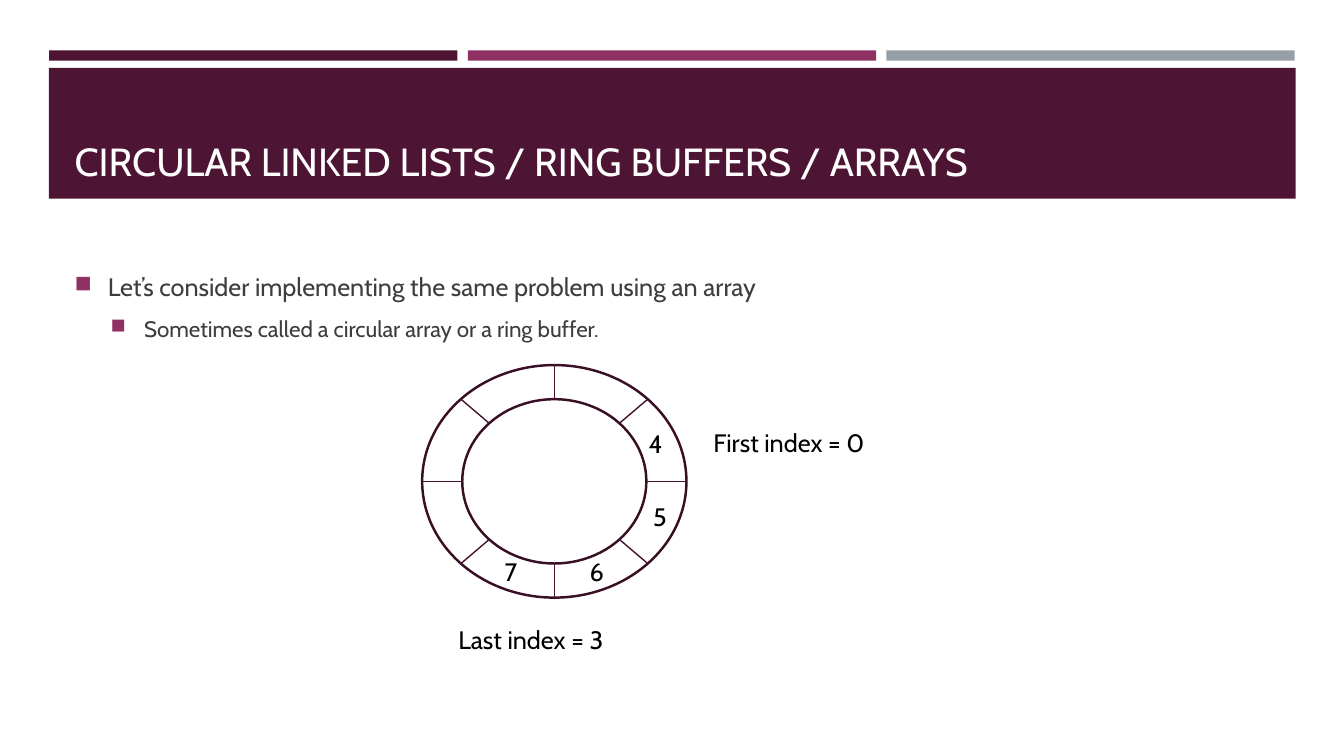
from dataclasses import dataclass
from math import cos, pi, sin

from lxml import etree
from pptx import Presentation
from pptx.dml.color import RGBColor
from pptx.enum.shapes import MSO_CONNECTOR as Connector
from pptx.enum.shapes import MSO_SHAPE as Shape
from pptx.enum.text import MSO_ANCHOR as Anchor
from pptx.oxml.ns import qn
from pptx.util import Cm, Pt


@dataclass(frozen=True)
class Theme:
    font: str = "Cabin"
    plum: str = "4D1434"
    magenta: str = "903163"
    grey: str = "969FA7"
    white: str = "FFFFFF"
    black: str = "000000"
    body: str = "3D3D3D"
    ring: str = "390F26"
    spoke: str = "45122F"
    title_size: int = 28
    text_size: int = 18
    sub_size: int = 16


THEME = Theme()
SLOTS = 8
CENTRE = (13.97, 12.13)
OUTER = (3.33, 2.93)
INNER = (2.32, 2.07)


def color(value):
    return RGBColor.from_string(value)


def add_block(slide, kind, left, top, width, height, fill, line=None):
    shape = slide.shapes.add_shape(kind, Cm(left), Cm(top), Cm(width), Cm(height))
    shape.shadow.inherit = False
    shape.fill.solid()
    shape.fill.fore_color.rgb = color(fill)
    if line:
        shape.line.color.rgb = color(line)
        shape.line.width = Pt(1.75)
    else:
        shape.line.fill.background()


def add_frame(slide, left, top, width, height, wrap=True, anchor=Anchor.TOP):
    box = slide.shapes.add_textbox(Cm(left), Cm(top), Cm(width), Cm(height))
    frame = box.text_frame
    frame.word_wrap = wrap
    frame.vertical_anchor = anchor
    return frame


def set_text(paragraph, text, size, text_color):
    paragraph.text = text
    paragraph.font.name = THEME.font
    paragraph.font.size = Pt(size)
    paragraph.font.color.rgb = color(text_color)


def add_label(slide, text, left, top, width):
    frame = add_frame(slide, left, top, width, 1.02, wrap=False)
    set_text(frame.paragraphs[0], text, THEME.text_size, THEME.black)


def set_bullet(paragraph, margin, level):
    properties = paragraph._p.get_or_add_pPr()
    properties.set("marL", str(Cm(margin)))
    properties.set("indent", str(Cm(-0.84)))
    paragraph.level = level
    bullet_color = etree.SubElement(properties, qn("a:buClr"))
    etree.SubElement(bullet_color, qn("a:srgbClr"), val=THEME.magenta)
    etree.SubElement(properties, qn("a:buSzPct"), val="92000")
    etree.SubElement(properties, qn("a:buChar"), char="■")


def add_bullets(slide):
    frame = add_frame(slide, 1.63, 6.72, 30.63, 2.2)
    first, second = frame.paragraphs[0], frame.add_paragraph()
    set_bullet(first, 0.84, 0)
    set_bullet(second, 1.75, 1)
    first.space_after = Pt(6)
    second.space_before = Pt(3.2)
    set_text(first, "Let’s consider implementing the same problem using an array",
             THEME.text_size, THEME.body)
    set_text(second, "Sometimes called a circular array or a ring buffer.",
             THEME.sub_size, THEME.body)


def add_oval(slide, radii):
    left, top = (middle - radius for middle, radius in zip(CENTRE, radii))
    add_block(slide, Shape.OVAL, left, top, 2 * radii[0], 2 * radii[1],
              THEME.white, THEME.ring)


def ring_point(radii, angle):
    return (Cm(CENTRE[0] + radii[0] * cos(angle)),
            Cm(CENTRE[1] + radii[1] * sin(angle)))


def add_spoke(slide, angle):
    line = slide.shapes.add_connector(
        Connector.STRAIGHT, *ring_point(INNER, angle), *ring_point(OUTER, angle))
    line.line.color.rgb = color(THEME.spoke)
    line.line.width = Pt(1)
    etree.SubElement(line._element.spPr, qn("a:effectLst"))


def add_header(slide):
    # Three stripes above the title band
    for index, fill in enumerate((THEME.plum, THEME.magenta, THEME.grey)):
        add_block(slide, Shape.RECTANGLE, 1.24 + 10.55 * index, 1.27, 10.29, 0.26, fill)
    add_block(slide, Shape.RECTANGLE, 1.23, 1.71, 31.42, 3.3, THEME.plum)
    title = add_frame(slide, 1.63, 1.96, 30.63, 2.82, anchor=Anchor.BOTTOM)
    set_text(title.paragraphs[0], "CIRCULAR LINKED LISTS / RING BUFFERS / ARRAYS",
             THEME.title_size, THEME.white)


def add_ring(slide):
    for radii in (OUTER, INNER):
        add_oval(slide, radii)
    for slot in range(SLOTS):
        add_spoke(slide, 2 * pi * slot / SLOTS)


def main():
    presentation = Presentation()
    presentation.slide_width, presentation.slide_height = Cm(33.87), Cm(19.05)
    slide = presentation.slides.add_slide(presentation.slide_layouts[6])

    add_header(slide)
    add_bullets(slide)
    add_ring(slide)

    # Stored values and index labels
    for text, left, top, width in (
        ("4", 16.1, 10.67, 0.84),
        ("5", 16.21, 12.52, 0.84),
        ("6", 14.61, 13.89, 0.84),
        ("7", 12.47, 13.89, 0.84),
        ("First index = 0", 17.73, 10.64, 4.32),
        ("Last index = 3", 11.3, 15.6, 4.22),
    ):
        add_label(slide, text, left, top, width)

    presentation.save("out.pptx")


if __name__ == "__main__":
    main()
